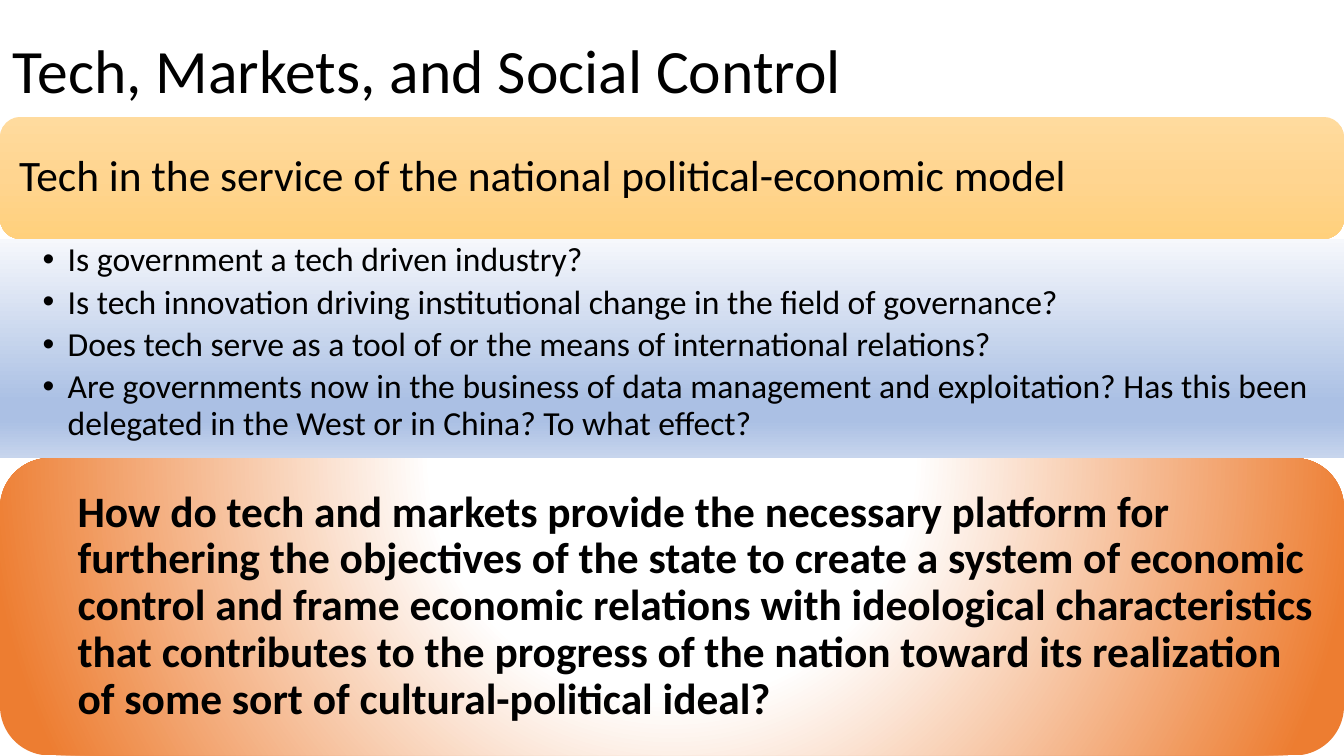
from lxml import etree
from pptx import Presentation
from pptx.dml.color import RGBColor
from pptx.enum import shapes, text
from pptx.oxml import ns
from pptx.util import Pt

WIDTH, HEIGHT = 960, 540
HEADING = "Tech in the service of the national political-economic model"
QUESTIONS = [
    "Is government a tech driven industry?",
    "Is tech innovation driving institutional change in the field of governance?",
    "Does tech serve as a tool of or the means of international relations?",
    "Are governments now in the business of data management and exploitation? "
    "Has this been delegated in the West or in China? To what effect?",
]
CONCLUSION = (
    "How do tech and markets provide the necessary platform for furthering the "
    "objectives of the state to create a system of economic control and frame "
    "economic relations with ideological characteristics that contributes to the "
    "progress of the nation toward its realization of some sort of "
    "cultural-political ideal?"
)


def rgb(value):
    return RGBColor.from_string(value)


def add(parent, tag, **attrs):
    """Append a drawing element with the given attributes."""
    el = etree.SubElement(parent, ns.qn(tag))
    for name, value in attrs.items():
        el.set(name, str(value))
    return el


class Deck:
    font = "Calibri"
    color = "000000"

    def __init__(self):
        self.prs = Presentation()
        self.prs.slide_width, self.prs.slide_height = Pt(WIDTH), Pt(HEIGHT)
        self.slide = self.prs.slides.add_slide(self.prs.slide_layouts[6])

    def band(self, kind, top, height, stops, focus=None):
        """Full-width shape, shaded downwards or in circles around focus."""
        sp = self.slide.shapes.add_shape(kind, 0, Pt(top), Pt(WIDTH), Pt(height))
        sp.shadow.inherit = False
        sp.line.fill.background()
        grad = etree.Element(ns.qn("a:gradFill"), rotWithShape="1")
        stop_list = add(grad, "a:gsLst")
        for percent, color in stops:
            stop = add(stop_list, "a:gs", pos=percent * 1000)
            add(stop, "a:srgbClr", val=rgb(color))
        if focus:
            circle = add(grad, "a:path", path="circle")
            sides = {side: value * 1000 for side, value in zip("ltrb", focus)}
            add(circle, "a:fillToRect", **sides)
        else:
            add(grad, "a:lin", ang=90 * 60000, scaled=0)
        geometry = sp.element.spPr.find(ns.qn("a:prstGeom"))
        geometry.addnext(grad)

    def text(self, box, lines, size, insets=(9.36,) * 4, anchor=text.MSO_ANCHOR.MIDDLE,
             bold=False, bullet=False, indent=0, gap=0):
        sp = self.slide.shapes.add_textbox(*map(Pt, box))
        tf = sp.text_frame
        tf.word_wrap = True
        tf.vertical_anchor = anchor
        (tf.margin_left, tf.margin_top,
         tf.margin_right, tf.margin_bottom) = map(Pt, insets)
        tf.text = "\n".join(lines)
        for i, p in enumerate(tf.paragraphs):
            p.line_spacing = 0.9
            p.space_before = Pt(gap if i else 0)
            pPr = p._p.get_or_add_pPr()
            pPr.set("marL", str(Pt(indent)))
            if bullet:
                pPr.set("indent", str(-Pt(indent)))
                add(pPr, "a:buFont", typeface="Arial")
                add(pPr, "a:buChar", char="•")
            for r in p.runs:
                r.font.name, r.font.size, r.font.bold = self.font, Pt(size), bold
                r.font.color.rgb = rgb(self.color)


def main():
    deck = Deck()
    rounded = shapes.MSO_SHAPE.ROUNDED_RECTANGLE
    deck.text((2.2, 0, 828, 104.4), ["Tech, Markets, and Social Control"], 44,
              insets=(7.2, 3.6, 7.2, 3.6))

    deck.band(rounded, 83.5, 87.1, [(0, "FFDB9E"), (50, "FFD590"), (100, "FFD07C")])
    deck.text((4.3, 87.8, 951.4, 78.5), [HEADING], 31)

    deck.band(shapes.MSO_SHAPE.RECTANGLE, 170.6, 156.6,
              [(0, "F6F8FC"), (74, "ABC0E4"), (83, "ABC0E4"), (100, "C7D5ED")])
    deck.text((0, 170.6, WIDTH, 156.6), QUESTIONS, 24, insets=(30.4, 2.9, 17.3, 2.9),
              anchor=text.MSO_ANCHOR.TOP, bullet=True, indent=18, gap=4.3)

    deck.band(rounded, 327.2, 212.4, [(0, "FFFFFF"), (35, "FFFFFF"), (100, "ED7D31")],
              focus=(50, -80, 50, 180))
    deck.text((10.1, 337.7, 939.6, 191.5), [CONCLUSION], 31, bold=True, indent=36)
    deck.prs.save("out.pptx")


if __name__ == "__main__":
    main()
